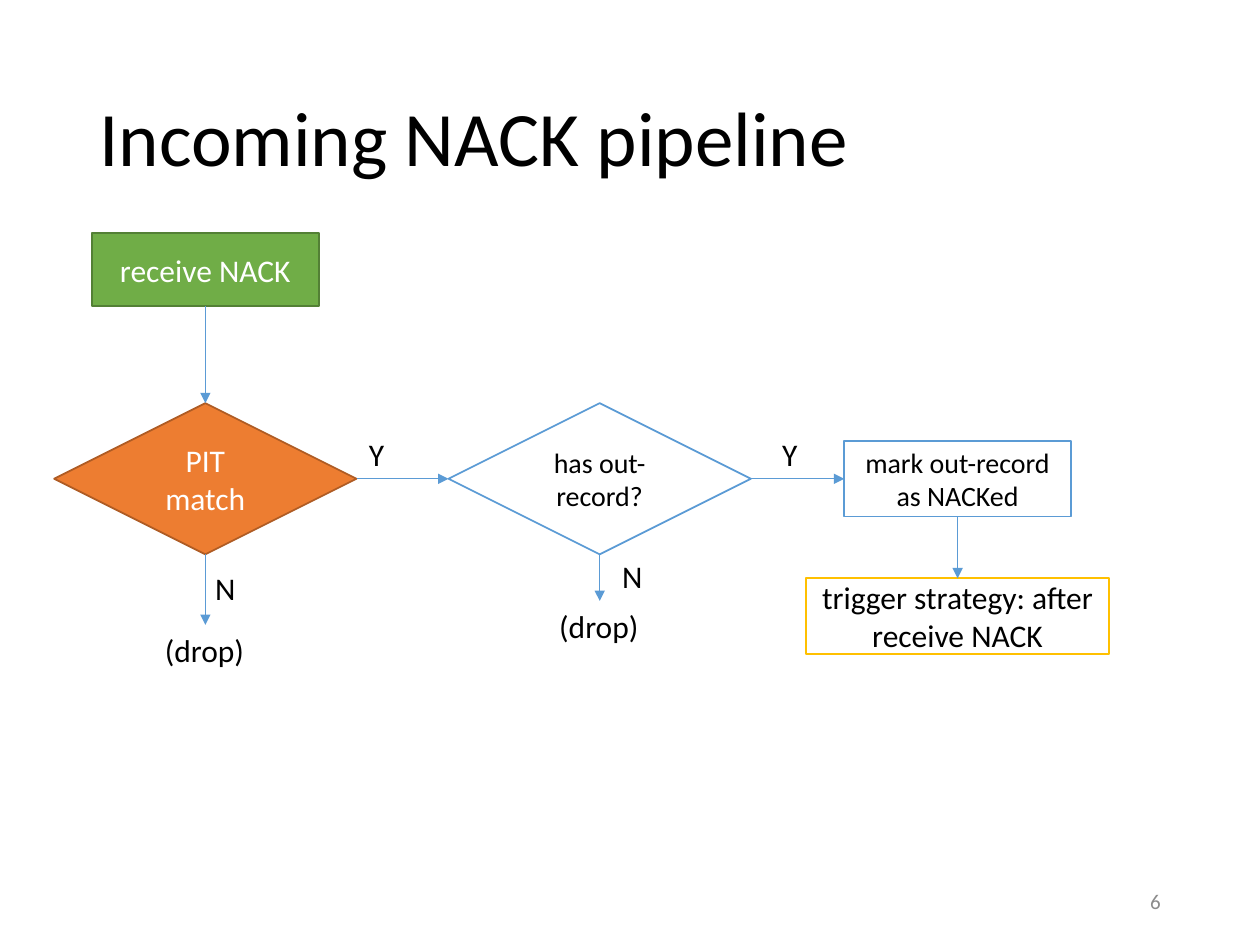
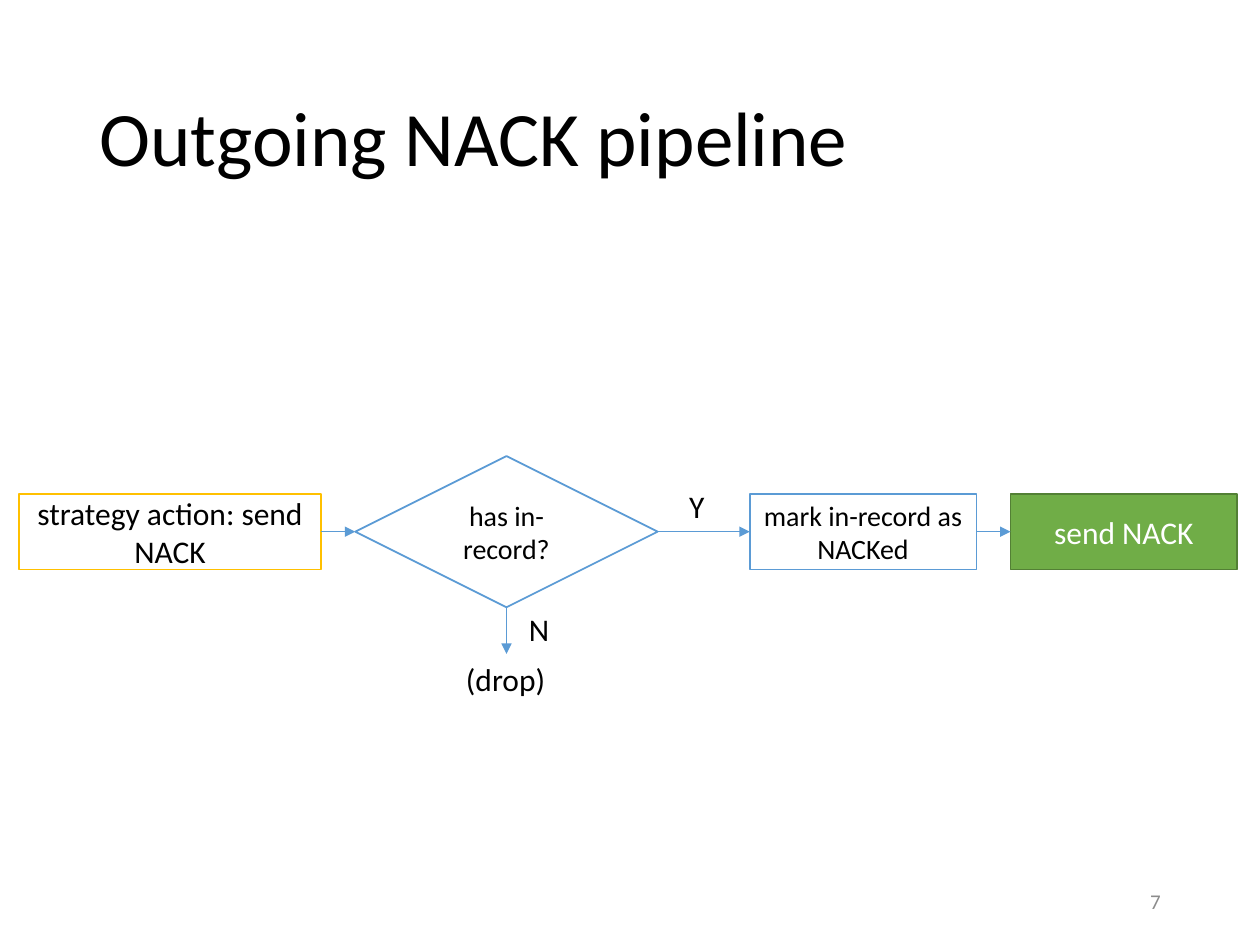
from dataclasses import dataclass

from pptx import Presentation
from pptx.dml.color import RGBColor
from pptx.enum.shapes import MSO_CONNECTOR, MSO_SHAPE
from pptx.enum.text import MSO_ANCHOR, PP_ALIGN
from pptx.oxml.ns import qn
from pptx.util import Inches, Pt
from lxml.etree import SubElement

TOP, LEFT, BOTTOM, RIGHT = range(4)


@dataclass(frozen=True)
class Look:
    fill: str
    line: str
    text: str
    size: int


@dataclass(frozen=True)
class Theme:
    font: str = "Calibri"
    text: str = "000000"
    muted: str = "8C8C8C"
    arrow: str = "5B9BD5"
    title_size: int = 44
    label_size: int = 18
    number_size: int = 12
    outline: float = 1
    arrow_width: float = 0.5
    endpoint: Look = Look("70AD47", "538035", "FFFFFF", 18)
    table_lookup: Look = Look("ED7D31", "AF5C24", "FFFFFF", 18)
    step: Look = Look("FFFFFF", "5B9BD5", "000000", 16)
    strategy: Look = Look("FFFFFF", "FFC000", "000000", 18)


class PipelineDeck:
    def __init__(self, theme):
        self.theme = theme
        self.presentation = Presentation()
        self.presentation.slide_width = Inches(10)
        self.presentation.slide_height = Inches(7.5)
        self.slide = None

    def add_slide(self, title, number):
        theme = self.theme
        self.slide = self.presentation.slides.add_slide(self.presentation.slide_layouts[6])
        heading = self.text(title, Inches(0.69), Inches(0.4), Inches(8.62), Inches(1.45),
                            theme.title_size, wrap=True, anchor=MSO_ANCHOR.MIDDLE)
        heading.text_frame.paragraphs[0].line_spacing = 0.9
        self.text(str(number), Inches(7.06), Inches(6.95), Inches(2.25), Inches(0.4),
                  theme.number_size, theme.muted, PP_ALIGN.RIGHT, True, MSO_ANCHOR.MIDDLE)

    def set_text(self, shape, text, size, color, align):
        paragraph = shape.text_frame.paragraphs[0]
        paragraph.text = text
        paragraph.alignment = align
        paragraph.font.name = self.theme.font
        paragraph.font.size = Pt(size)
        paragraph.font.color.rgb = RGBColor.from_string(color)

    def text(self, text, left, top, width, height, size, color=None,
             align=PP_ALIGN.LEFT, wrap=False, anchor=MSO_ANCHOR.TOP):
        box = self.slide.shapes.add_textbox(left, top, width, height)
        box.text_frame.word_wrap = wrap
        box.text_frame.vertical_anchor = anchor
        self.set_text(box, text, size, color or self.theme.text, align)
        return box

    def label(self, text, left, top, width):
        return self.text(text, left, top, Inches(width), Inches(0.4), self.theme.label_size)

    def node(self, text, look, left, top, width=1.8, height=0.6, kind=MSO_SHAPE.RECTANGLE):
        shape = self.slide.shapes.add_shape(
            kind, Inches(left), Inches(top), Inches(width), Inches(height))
        shape.shadow.inherit = False
        shape.fill.solid()
        shape.fill.fore_color.rgb = RGBColor.from_string(look.fill)
        shape.line.color.rgb = RGBColor.from_string(look.line)
        shape.line.width = Pt(self.theme.outline)
        shape.text_frame.word_wrap = True
        shape.text_frame.vertical_anchor = MSO_ANCHOR.MIDDLE
        self.set_text(shape, text, look.size, look.text, PP_ALIGN.CENTER)
        return shape

    def decision(self, text, look, left, top):
        return self.node(text, look, left, top, 2.4, 1.2, MSO_SHAPE.FLOWCHART_DECISION)

    def arrow(self, source, target, start=RIGHT, end=LEFT):
        connector = self.slide.shapes.add_connector(MSO_CONNECTOR.STRAIGHT, 0, 0, 0, 0)
        connector.begin_connect(source, start)
        connector.end_connect(target, end)
        connector.line.color.rgb = RGBColor.from_string(self.theme.arrow)
        connector.line.width = Pt(self.theme.arrow_width)
        properties = connector._element.spPr
        SubElement(properties.find(qn("a:ln")), qn("a:tailEnd"), type="triangle")
        SubElement(properties, qn("a:effectLst"))

    def yes(self, decision, target, offset=0.15):
        self.arrow(decision, target)
        middle = decision.top + decision.height // 2
        self.label("Y", decision.left + decision.width + Inches(offset),
                   middle - Inches(0.4), 0.32)

    def no_drop(self, decision, drop=0.37, label_x=0.08, label_y=-0.03):
        center = decision.left + decision.width // 2
        bottom = decision.top + decision.height
        target = self.label("(drop)", center - Inches(0.42), bottom + Inches(drop), 0.84)
        self.arrow(decision, target, BOTTOM, TOP)
        self.label("N", center + Inches(label_x), bottom + Inches(label_y), 0.36)


def incoming_pipeline(deck):
    theme = deck.theme
    deck.add_slide("Incoming NACK pipeline", 6)
    receive = deck.node("receive NACK", theme.endpoint, 0.73, 1.85, height=0.58)
    pit_match = deck.decision("PIT match", theme.table_lookup, 0.43, 3.2)
    out_record = deck.decision("has out-record?", theme.step, 3.56, 3.2)
    mark = deck.node("mark out-record as NACKed", theme.step, 6.7, 3.5)
    trigger = deck.node("trigger strategy: after receive NACK", theme.strategy, 6.4, 4.59, 2.4)
    deck.arrow(receive, pit_match, BOTTOM, TOP)
    deck.yes(pit_match, out_record, offset=0)
    deck.no_drop(pit_match, drop=0.56, label_x=-0.02, label_y=0.07)
    deck.yes(out_record, mark)
    deck.no_drop(out_record)
    deck.arrow(mark, trigger, BOTTOM, TOP)


def outgoing_pipeline(deck):
    theme = deck.theme
    deck.add_slide("Outgoing NACK pipeline", 7)
    action = deck.node("strategy action: send NACK", theme.strategy, 0.15, 3.92, 2.4)
    in_record = deck.decision("has in-record?", theme.step, 2.82, 3.62)
    mark = deck.node("mark in-record as NACKed", theme.step, 5.95, 3.92)
    send = deck.node("send NACK", theme.endpoint, 8.02, 3.92)
    deck.arrow(action, in_record)
    deck.yes(in_record, mark)
    deck.no_drop(in_record)
    deck.arrow(mark, send)


def main():
    deck = PipelineDeck(Theme())
    incoming_pipeline(deck)
    outgoing_pipeline(deck)
    deck.presentation.save("out.pptx")


if __name__ == "__main__":
    main()
